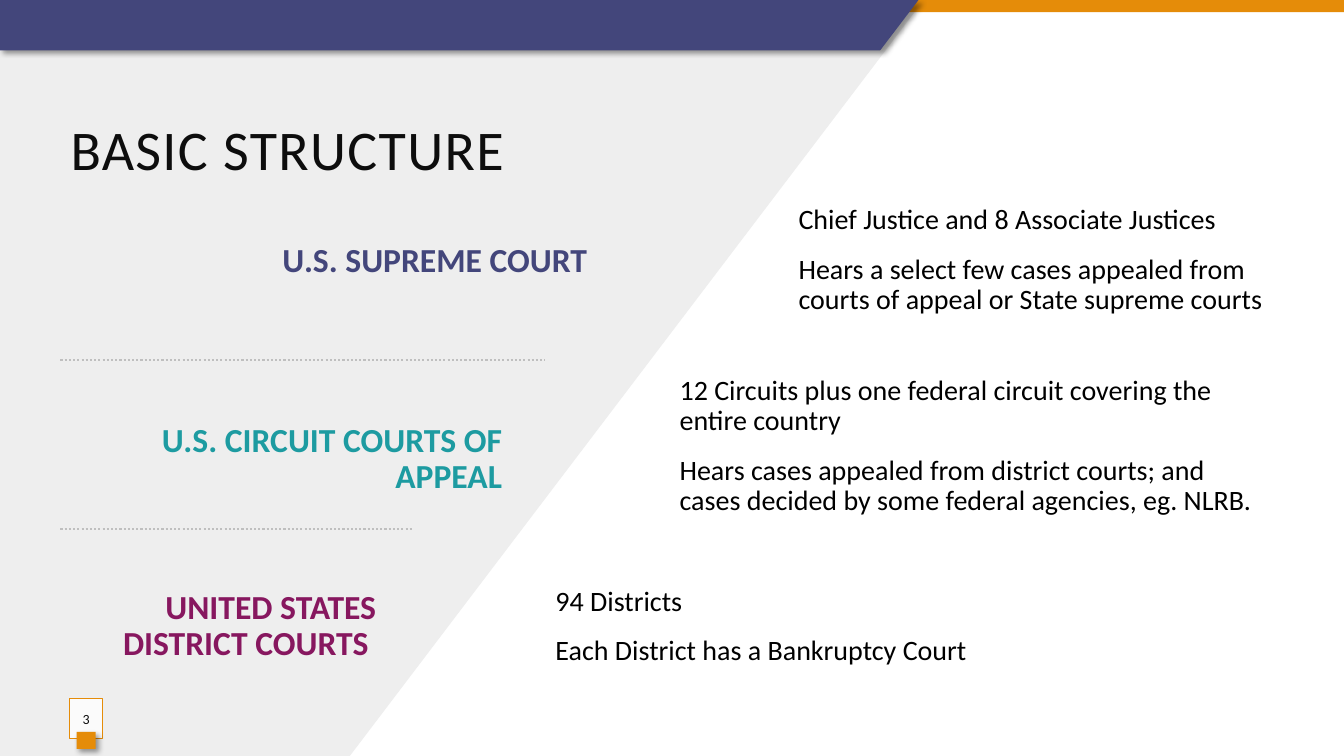
from pptx import Presentation
from pptx import util as u
from pptx.dml.color import RGBColor
from pptx.enum import dml, shapes, text
from pptx.oxml.ns import qn
from pptx.oxml.xmlchemy import OxmlElement

NAVY, ORANGE, BLACK = "43467B", "E58C09", "0D0D0D"
COURTS = [
    ((0.69, 1.98, 5.31, 1.24), " U.S. SUPREME COURT ", NAVY,
     (7.82, 1.75, 4.91, 1.67),
     ["Chief Justice and 8 Associate Justices",
      "Hears a select few cases appealed from courts of appeal or State supreme courts"]),
    ((0.6, 4.21, 4.48, 0.7), " U.S. CIRCUIT COURTS OF APPEAL", "1D9BA1",
     (6.64, 3.85, 5.9, 1.16),
     ["12 Circuits plus one federal circuit covering the entire country",
      "Hears cases appealed from district courts; and cases decided by some federal agencies, eg. NLRB."]),
    ((0.6, 5.84, 3.23, 0.75), "UNITED STATES DISTRICT COURTS ", "87175F",
     (5.41, 5.6, 7.12, 1.24),
     ["94 Districts", "Each District has a Bankruptcy Court"]),
]


def rgb(value):
    return RGBColor.from_string(value)


def child(parent, tag, **attrs):
    el = OxmlElement(tag)
    for name, value in attrs.items():
        el.set(name, str(value))
    parent.append(el)
    return el


def paint(sp, fill, line=None, shadow=False, alpha=None):
    sp.fill.solid()
    sp.fill.fore_color.rgb = rgb(fill)
    if alpha:
        child(sp.fill._xPr.find(".//" + qn("a:srgbClr")), "a:alpha", val=alpha * 1000)
    if line:
        sp.line.color.rgb = rgb(line)
        sp.line.width = u.Pt(0.75)
    else:
        sp.line.fill.background()
    sp.shadow.inherit = False
    if shadow:
        effects = sp._element.spPr.find(qn("a:effectLst"))
        outer = child(effects, "a:outerShdw", blurRad=u.Pt(4), dist=u.Pt(3),
                      dir=45 * 60000, algn="tl", rotWithShape=0)
        child(child(outer, "a:srgbClr", val="000000"), "a:alpha", val=40000)


def write(sp, lines, size, color, bold=False, align=text.PP_ALIGN.LEFT,
          leading=0.9, before=12, after=2, spacing=0):
    tf = sp.text_frame
    tf.word_wrap = True
    tf.auto_size = text.MSO_AUTO_SIZE.NONE
    tf.vertical_anchor = text.MSO_ANCHOR.MIDDLE
    for i, line in enumerate(lines):
        p = tf.add_paragraph() if i else tf.paragraphs[0]
        p.alignment, p.line_spacing = align, leading
        p.space_before, p.space_after = u.Pt(before), u.Pt(after)
        pPr = p._p.get_or_add_pPr()
        pPr.set("marL", "0")
        pPr.set("indent", "0")
        child(pPr, "a:buNone")
        r = p.add_run()
        r.text = line
        r.font.name, r.font.size, r.font.bold = "Calibri", u.Pt(size), bold
        r.font.color.rgb = rgb(color)
        if spacing:
            r._r.get_or_add_rPr().set("spc", str(spacing * 100))


def rect(s, box, fill, **kw):
    sp = s.shapes.add_shape(shapes.MSO_SHAPE.RECTANGLE, *map(u.Inches, box))
    paint(sp, fill, **kw)
    return sp


def outline(s, points, fill, **kw):
    corners = [(u.Inches(x), u.Inches(y)) for x, y in points]
    fb = s.shapes.build_freeform(*corners[0])
    fb.add_line_segments(corners[1:], close=True)
    paint(fb.convert_to_shape(), fill, **kw)


def place(s, sp, box):
    sp.left, sp.top, sp.width, sp.height = map(u.Inches, box)
    s.shapes.element.append(sp._element)
    return sp


def backdrop(s, box):
    x, y, w, h = box
    edge = x + 9.11
    outline(s, [(x, y), (edge, y), (edge, y + 0.07), (x + 3.47, y + h), (x, y + h)], "EEEEEE")
    rect(s, (x, y, w, 0.12), ORANGE)
    outline(s, [(x, y), (edge, y), (x + 8.73, y + 0.5), (x, y + 0.5)], NAVY, shadow=True)


def heading(s, box):
    write(place(s, s.shapes.title, box), ["BASIC STRUCTURE"], 40, BLACK,
          leading=1.0, before=0, after=0, spacing=1)


def court(s, holders, label_box, label, color, detail_box, details):
    def holder(box):
        sp = next(holders, None) or s.shapes.add_textbox(0, 0, 0, 0)
        return place(s, sp, box)

    write(holder(label_box), [label], 24, color, bold=True, align=text.PP_ALIGN.RIGHT)
    write(holder(detail_box), details, 20, "000000")


def divider(s, x, y, length):
    line = s.shapes.add_connector(shapes.MSO_CONNECTOR.STRAIGHT,
                                  *map(u.Inches, (x, y, x + length, y)))
    line.line.color.rgb = rgb("BFBFBF")
    line.line.width = u.Pt(1.5)
    line.line.dash_style = dml.MSO_LINE.ROUND_DOT
    child(line._element.spPr, "a:effectLst")


def page_number(s, box):
    x, y, w, h = box
    sp = rect(s, box, "FFFFFF", line=ORANGE, alpha=82)
    sp.text_frame.margin_left = sp.text_frame.margin_right = 0
    write(sp, ["3"], 10, BLACK, align=text.PP_ALIGN.CENTER, leading=1.0, before=0, after=0)
    rect(s, (x + 0.07, y + 0.33, 0.19, 0.17), ORANGE, shadow=True)


def main():
    prs = Presentation()
    prs.slide_width, prs.slide_height = u.Inches(13.33), u.Inches(7.5)
    s = prs.slides.add_slide(prs.slide_layouts.get_by_name("Comparison"))
    holders = iter([sp for sp in s.placeholders if sp.placeholder_format.idx])
    backdrop(s, (0, 0, 13.33, 7.5))
    heading(s, (0.6, 1.08, 11.82, 0.77))
    for row in COURTS:
        court(s, holders, *row)
    page_number(s, (0.69, 6.93, 0.33, 0.4))
    divider(s, 0.6, 3.57, 4.8)
    divider(s, 0.6, 5.25, 3.5)
    prs.save("out.pptx")


if __name__ == "__main__":
    main()
